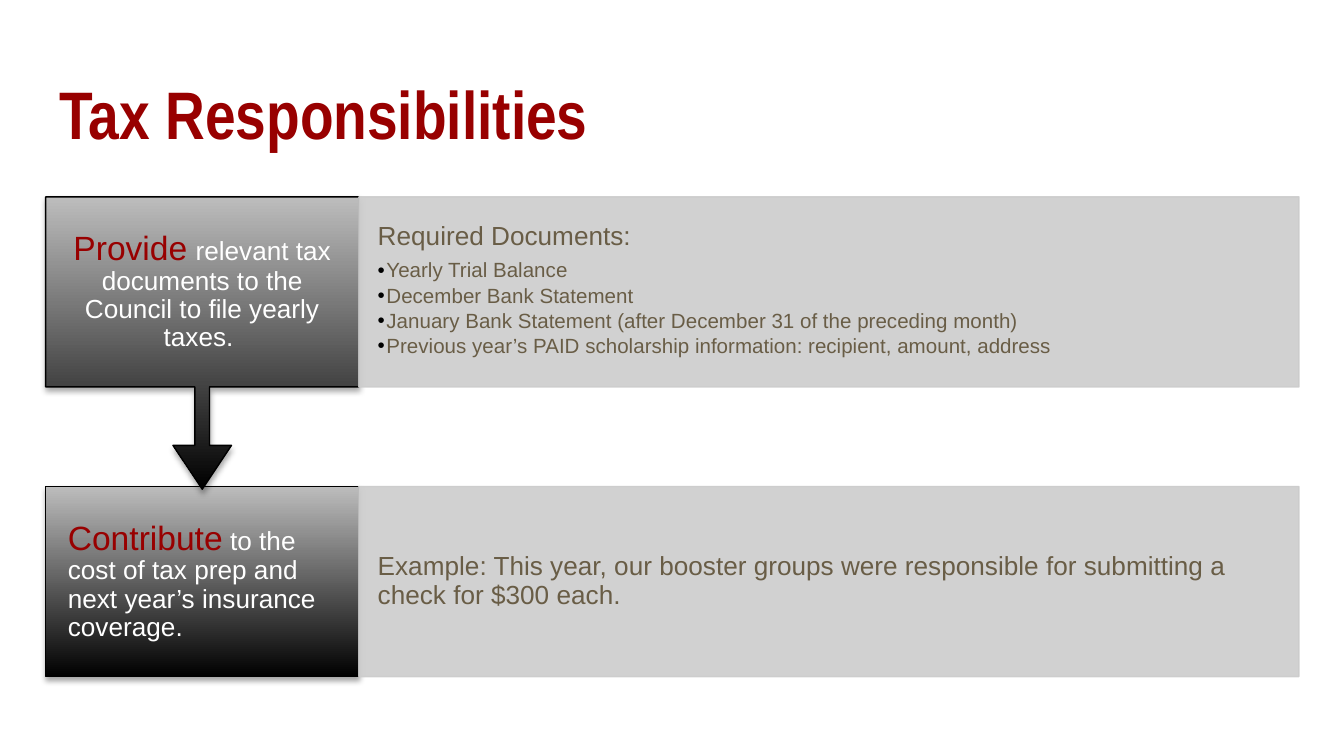
"""Build the Tax Responsibilities slide: two duties, each with a detail bar."""
from dataclasses import dataclass

from lxml.etree import SubElement
from pptx import Presentation
from pptx.dml.color import RGBColor
from pptx.enum.shapes import MSO_SHAPE
from pptx.enum.text import MSO_ANCHOR, MSO_AUTO_SIZE, PP_ALIGN
from pptx.oxml.ns import qn
from pptx.util import Pt

TITLE = "Tax Responsibilities"
DUTIES = [
    {
        "keyword": "Provide",
        "duty": "relevant tax documents to the Council to file yearly taxes. ",
        "align": PP_ALIGN.CENTER,
        "gap_size": 16,
        "detail": "Required Documents:",
        "documents": [
            "Yearly Trial Balance",
            "December Bank Statement",
            "January Bank Statement (after December 31 of the preceding month)",
            "Previous year’s PAID scholarship information: recipient, amount, address",
        ],
    },
    {
        "keyword": "Contribute",
        "duty": "to the cost of tax prep and next year’s insurance coverage.",
        "align": PP_ALIGN.LEFT,
        "gap_size": 14,
        "detail": "Example: This year, our booster groups were responsible for submitting a check for $300 each.",
        "documents": [],
    },
]


@dataclass(frozen=True)
class Theme:
    red: str = "980000"
    brown: str = "695D46"
    white: str = "FFFFFF"
    black: str = "000000"
    silver: str = "BDBDBD"
    bar: str = "CCCCCC"
    body_font: str = "Arial"
    title_font: str = "Arial Narrow"
    title_size: int = 36
    keyword_size: int = 18
    body_size: int = 14
    document_size: int = 11


THEME = Theme()
PX = 4572
SLIDE_W, SLIDE_H = 2000, 1125
LEFT, TOP, WIDTH = 68, 293, 1865
DUTY_W, ROW_H, ROW_PITCH = 466, 283, 431
CALLOUT_H = 435
CALLOUT_ADJUSTMENTS = (0.05, 0.1, 0.15, 0.65)
BULLET_INDENT = 13


def px(*lengths):
    return [length * PX for length in lengths]


def add_run(paragraph, text, *, size, color, font=THEME.body_font, bold=False):
    run = paragraph.add_run()
    run.text = text
    run.font.size = Pt(size)
    run.font.name = font
    run.font.bold = bold
    run.font.color.rgb = RGBColor.from_string(color)


def set_frame(frame, inset_x, inset_y, anchor=MSO_ANCHOR.MIDDLE):
    frame.word_wrap = True
    frame.auto_size = MSO_AUTO_SIZE.NONE
    frame.vertical_anchor = anchor
    frame.margin_left, frame.margin_right = px(inset_x, inset_x)
    frame.margin_top, frame.margin_bottom = px(inset_y, inset_y)


def set_paragraph(paragraph, align=PP_ALIGN.LEFT, after=0):
    paragraph.alignment = align
    paragraph.line_spacing = 0.9
    paragraph.space_before = Pt(0)
    paragraph.space_after = Pt(after)


def add_bullet(paragraph):
    paragraph.level = 1
    properties = paragraph._p.get_or_add_pPr()
    properties.set("marL", str(BULLET_INDENT * PX))
    properties.set("indent", str(-BULLET_INDENT * PX))
    bullet_color = SubElement(properties, qn("a:buClr"))
    SubElement(bullet_color, qn("a:srgbClr"), val=THEME.black)
    SubElement(properties, qn("a:buFont"), typeface=THEME.body_font)
    SubElement(properties, qn("a:buChar"), char="•")


def add_shadow(shape):
    effects = shape._element.spPr.find(qn("a:effectLst"))
    shadow = SubElement(effects, qn("a:outerShdw"), blurRad=str(Pt(3.1)),
                        dist=str(Pt(1.8)), dir="5400000", rotWithShape="0")
    shadow_color = SubElement(shadow, qn("a:srgbClr"), val=THEME.black)
    SubElement(shadow_color, qn("a:alpha"), val="35000")


def add_block(slide, preset, box, line_color):
    block = slide.shapes.add_shape(preset, *px(*box))
    block.shadow.inherit = False
    block.line.color.rgb = RGBColor.from_string(line_color)
    block.line.width = Pt(0.75)
    return block


def add_duty(slide, duty, top, leads_on):
    preset = MSO_SHAPE.DOWN_ARROW_CALLOUT if leads_on else MSO_SHAPE.RECTANGLE
    height = CALLOUT_H if leads_on else ROW_H
    block = add_block(slide, preset, (LEFT, top, DUTY_W, height), THEME.black)
    if leads_on:
        for index, value in enumerate(CALLOUT_ADJUSTMENTS):
            block.adjustments[index] = value
    block.fill.gradient()
    block.fill.gradient_angle = 90
    for stop, color in zip(block.fill.gradient_stops, (THEME.black, THEME.silver)):
        stop.color.rgb = RGBColor.from_string(color)
    add_shadow(block)
    set_frame(block.text_frame, 33, 28)
    paragraph = block.text_frame.paragraphs[0]
    set_paragraph(paragraph, duty["align"])
    add_run(paragraph, duty["keyword"], size=THEME.keyword_size, color=THEME.red)
    add_run(paragraph, " ", size=duty["gap_size"], color=THEME.white)
    add_run(paragraph, duty["duty"], size=THEME.body_size, color=THEME.white)


def add_detail(slide, duty, top):
    box = (LEFT + DUTY_W, top, WIDTH - DUTY_W, ROW_H)
    bar = add_block(slide, MSO_SHAPE.RECTANGLE, box, THEME.bar)
    bar.fill.solid()
    bar.fill.fore_color.rgb = RGBColor.from_string(THEME.bar)
    for color in bar._element.spPr.iter(qn("a:srgbClr")):
        SubElement(color, qn("a:alpha"), val="90000")
    frame = bar.text_frame
    set_frame(frame, 28, 39, MSO_ANCHOR.TOP if duty["documents"] else MSO_ANCHOR.MIDDLE)
    heading = frame.paragraphs[0]
    set_paragraph(heading, after=4.8 if duty["documents"] else 0)
    add_run(heading, duty["detail"], size=THEME.body_size, color=THEME.brown)
    for document in duty["documents"]:
        paragraph = frame.add_paragraph()
        set_paragraph(paragraph, after=1.6)
        add_bullet(paragraph)
        add_run(paragraph, document, size=THEME.document_size, color=THEME.brown)


def add_title(slide):
    title = slide.shapes.title
    title.left, title.top, title.width, title.height = px(LEFT, 98, WIDTH, 154)
    set_frame(title.text_frame, 20, 20)
    paragraph = title.text_frame.paragraphs[0]
    set_paragraph(paragraph)
    add_run(paragraph, TITLE, size=THEME.title_size, color=THEME.red,
            font=THEME.title_font, bold=True)


def main():
    deck = Presentation()
    deck.slide_width, deck.slide_height = px(SLIDE_W, SLIDE_H)
    slide = deck.slides.add_slide(deck.slide_layouts[5])
    add_title(slide)
    for row, duty in reversed(list(enumerate(DUTIES))):
        top = TOP + row * ROW_PITCH
        add_duty(slide, duty, top, leads_on=row < len(DUTIES) - 1)
        add_detail(slide, duty, top)
    deck.save("out.pptx")


if __name__ == "__main__":
    main()
